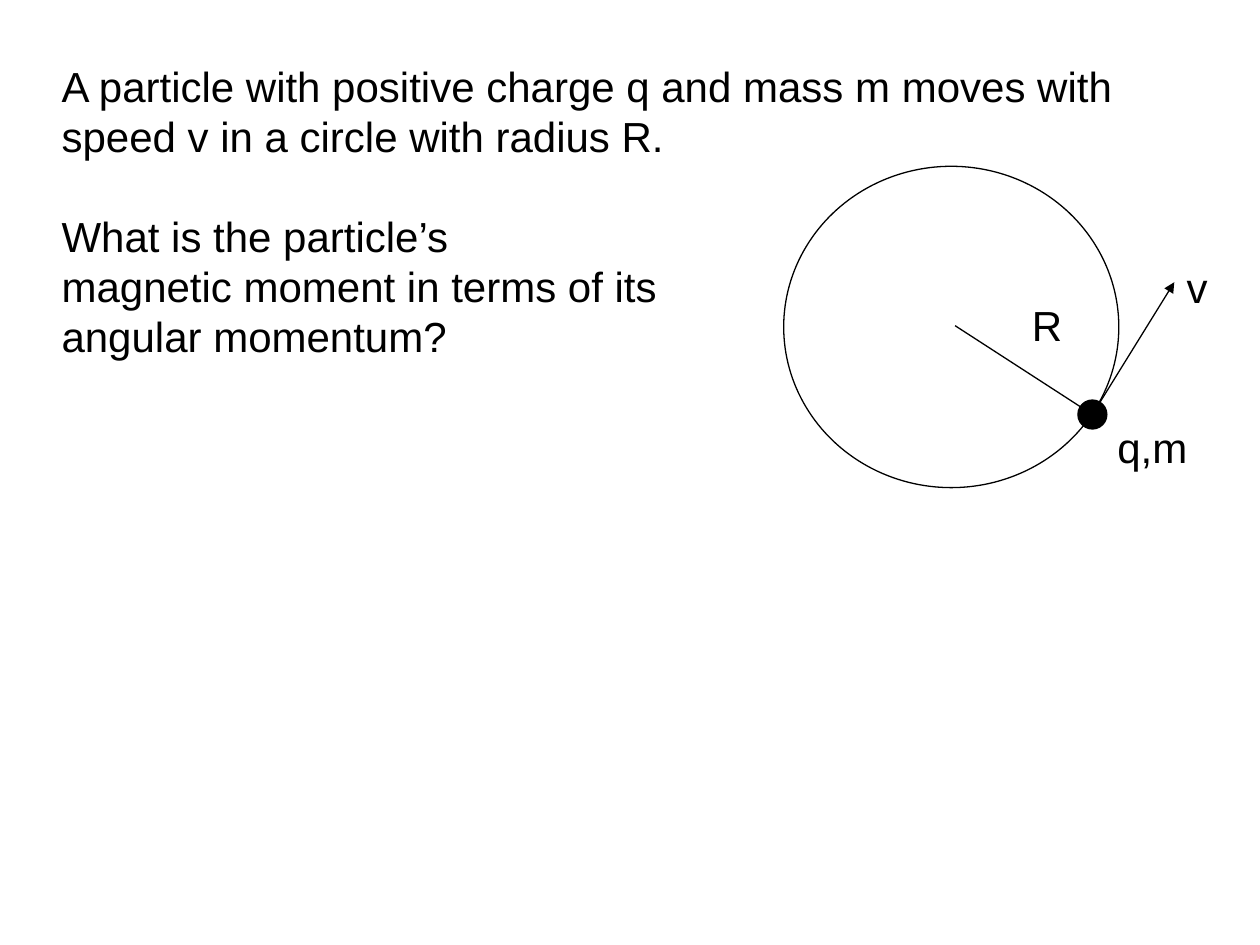
from lxml import etree
from pptx import Presentation
from pptx.dml.color import RGBColor
from pptx.enum.shapes import MSO_CONNECTOR, MSO_SHAPE
from pptx.oxml.ns import qn
from pptx.util import Inches, Pt

OVAL = MSO_SHAPE.OVAL
STRAIGHT = MSO_CONNECTOR.STRAIGHT
BLACK = "000000"
LINE_WIDTH = 0.75


def color(hex_code):
    """Return the colour for a hex string."""
    return RGBColor.from_string(hex_code)


def add_text(slide, lines, left, top, width, height, size=24, font="Arial",
             ink=BLACK, wrap=False, gaps=None):
    """Add a text box with one paragraph per line and gaps in points before some."""
    box = slide.shapes.add_textbox(Inches(left), Inches(top), Inches(width), Inches(height))
    frame = box.text_frame
    frame.word_wrap = wrap
    frame.text = "\n".join(lines)
    for index, paragraph in enumerate(frame.paragraphs):
        paragraph.space_before = Pt((gaps or {}).get(index, 0))
        paragraph.font.size = Pt(size)
        paragraph.font.name = font
        paragraph.font.color.rgb = color(ink)


def add_circle(slide, left, top, width, height, fill=None):
    """Add a thinly outlined ellipse, hollow unless a fill is given."""
    circle = slide.shapes.add_shape(OVAL, Inches(left), Inches(top), Inches(width), Inches(height))
    circle.shadow.inherit = False
    circle.line.color.rgb = color(BLACK)
    circle.line.width = Pt(LINE_WIDTH)
    if fill:
        circle.fill.solid()
        circle.fill.fore_color.rgb = color(fill)
    else:
        circle.fill.background()


def add_line(slide, start, end, arrow=False):
    """Add a straight line, with an arrowhead at its end if asked."""
    points = [Inches(length) for length in (*start, *end)]
    line = slide.shapes.add_connector(STRAIGHT, *points)
    line.line.color.rgb = color(BLACK)
    line.line.width = Pt(LINE_WIDTH)
    if arrow:
        outline = line.line._get_or_add_ln()
        etree.SubElement(outline, qn("a:tailEnd"), type="triangle")
    etree.SubElement(line._element.spPr, qn("a:effectLst"))


def add_question(slide, left, top, width, height):
    """Place the problem statement and the question."""
    lines = [
        "A particle with positive charge q and mass m moves with speed v "
        "in a circle with radius R.",
        "What is the particle’s",
        "magnetic moment in terms of its",
        "angular momentum?",
    ]
    add_text(slide, lines, left, top, width, height, wrap=True, gaps={1: 28})


def add_orbit(slide, left, top, width, height):
    """Draw the orbit with its radius, particle, velocity and labels."""
    center = (left + width / 2 + 0.03, top + height / 2 - 0.01)
    particle = (left + 2.45, top + 1.97)
    velocity_tip = (left + 3.1, top + 0.92)
    diameter = 0.23

    add_circle(slide, left, top, width, height)
    add_circle(slide, particle[0] - diameter / 2, particle[1] - diameter / 2,
               diameter, diameter, fill=BLACK)
    add_line(slide, particle, velocity_tip, arrow=True)
    add_line(slide, center, particle)
    for label, dx, dy, label_width in (("q,m", 2.55, 1.98, 0.76),
                                       ("v", 3.1, 0.71, 0.37),
                                       ("R", 1.87, 1.01, 0.45)):
        add_text(slide, [label], left + dx, top + dy, label_width, 0.5)


def main():
    """Build and save the slide."""
    deck = Presentation()
    deck.slide_width, deck.slide_height = Inches(10), Inches(7.5)
    slide = deck.slides.add_slide(deck.slide_layouts[6])
    add_question(slide, 0.39, 0.43, 9.21, 2.52)
    add_orbit(slide, 6.22, 1.32, 2.66, 2.55)
    deck.save("out.pptx")


if __name__ == "__main__":
    main()
